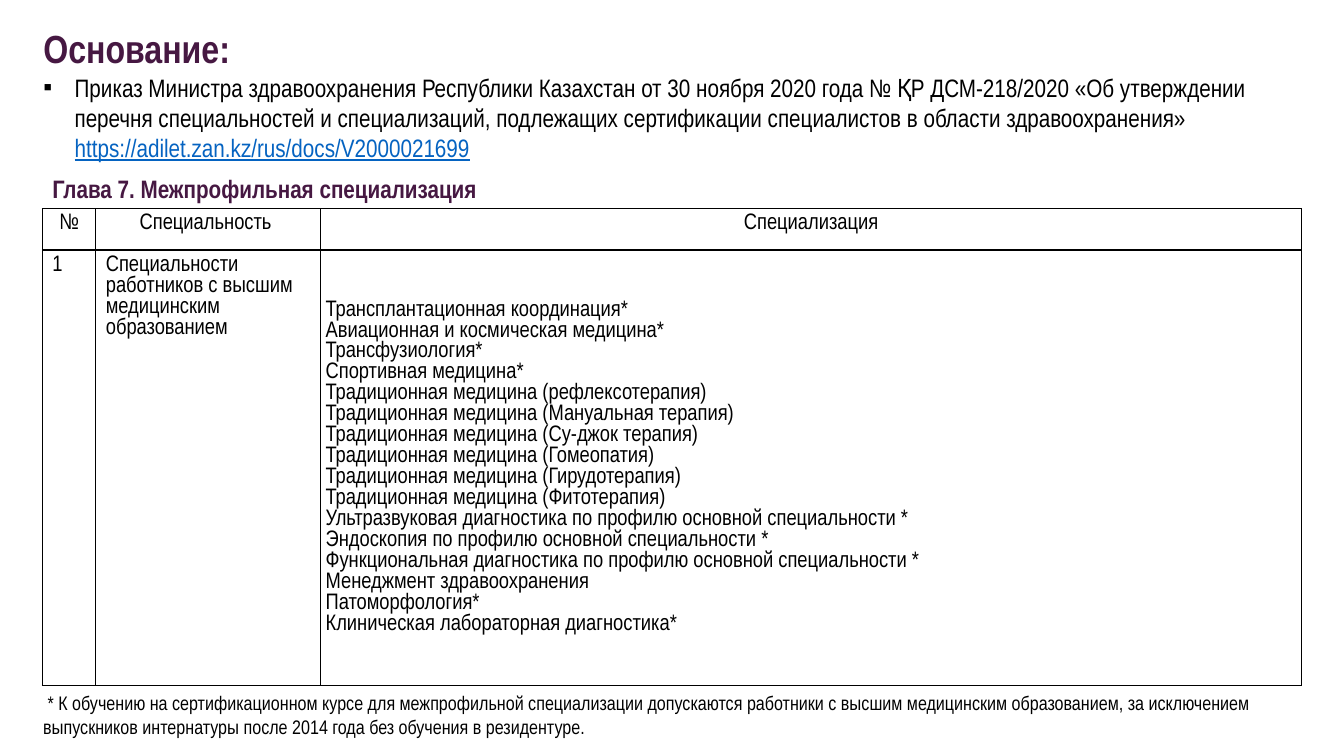
from lxml import etree
from pptx import Presentation
from pptx import util as u
from pptx.dml.color import RGBColor
from pptx.enum import text
from pptx.oxml import ns

FONT = "Arial Narrow"
PLUM = RGBColor(0x46, 0x18, 0x42)
BLACK = RGBColor(0, 0, 0)
LINK_BLUE = RGBColor(0x05, 0x63, 0xC1)

HEADINGS = ["№", "Специальность ", "Специализация"]
SPECIALTY = "Специальности работников с высшим медицинским образованием"
TRADITIONAL = ["рефлексотерапия", "Мануальная терапия", "Су-джок терапия",
               "Гомеопатия", "Гирудотерапия", "Фитотерапия"]
SPECIALIZATIONS = [
    "Трансплантационная координация*",
    "Авиационная и космическая медицина*",
    "Трансфузиология*",
    "Спортивная медицина*",
    *[f"Традиционная медицина ({kind})" for kind in TRADITIONAL],
    "Ультразвуковая диагностика по профилю основной специальности *",
    "Эндоскопия по профилю основной специальности *",
    "Функциональная диагностика по профилю основной специальности *",
    "Менеджмент здравоохранения",
    "Патоморфология*",
    "Клиническая лабораторная диагностика*",
]
ORDER = ("Приказ Министра здравоохранения Республики Казахстан от 30 ноября 2020 года "
         "№ ҚР ДСМ-218/2020 «Об утверждении перечня специальностей и специализаций, "
         "подлежащих сертификации специалистов в области здравоохранения» ")
ORDER_ADDRESS = "https://adilet.zan.kz/rus/docs/V2000021699"
FOOTNOTE = (" * К обучению на сертификационном курсе для межпрофильной специализации "
            "допускаются работники с высшим медицинским образованием, за исключением "
            "выпускников интернатуры после 2014 года без обучения в резидентуре.")


def style_span(span, size, color=BLACK, bold=False):
    span.font.name = FONT
    span.font.size = u.Pt(size)
    span.font.bold = bold
    span.font.color.rgb = color


def style_para(para, size, color=BLACK, bold=False, align=text.PP_ALIGN.LEFT, spacing=1.0):
    para.alignment = align
    para.line_spacing = spacing
    para.space_before = para.space_after = u.Pt(0)
    for span in para.runs:
        style_span(span, size, color, bold)


def place(shape, box):
    """Move a placeholder into the box and fix its text frame to the top."""
    shape.left, shape.top, shape.width, shape.height = map(u.Inches, box)
    frame = shape.text_frame
    frame.word_wrap = True
    frame.auto_size = text.MSO_AUTO_SIZE.NONE
    frame.vertical_anchor = text.MSO_ANCHOR.TOP
    return frame


def add_bullet(para, indent):
    props = para._p.get_or_add_pPr()
    props.set("marL", str(u.Inches(indent)))
    props.set("indent", str(-u.Inches(indent)))
    etree.SubElement(props, ns.qn("a:buFont"), typeface="Arial")
    etree.SubElement(props, ns.qn("a:buChar"), char="▪")


def add_basis(page, box):
    """Heading with the bulleted order below it."""
    left, top, width, height = box
    heading_height = 0.475
    frame = place(page.shapes.title, (left, top, width, heading_height + 0.05))
    frame.text = "Основание:"
    style_para(frame.paragraphs[0], 28, PLUM, True)

    frame = place(page.placeholders[1],
                  (left, top + heading_height, width, height - heading_height))
    para = frame.paragraphs[0]
    para.text = ORDER
    link = para.add_run()
    link.text = ORDER_ADDRESS
    style_para(para, 18)
    style_span(link, 18, LINK_BLUE)
    link.font.underline = True
    add_bullet(para, 0.31)


def add_text(page, box, words, size, color=BLACK, bold=False):
    frame = page.shapes.add_textbox(*map(u.Inches, box)).text_frame
    frame.word_wrap = True
    frame.text = words
    style_para(frame.paragraphs[0], size, color, bold)


def add_borders(cell):
    props = cell._tc.get_or_add_tcPr()
    for side in ("lnL", "lnR", "lnT", "lnB"):
        line = etree.SubElement(props, ns.qn(f"a:{side}"), w=str(u.Pt(1)))
        fill = etree.SubElement(line, ns.qn("a:solidFill"))
        etree.SubElement(fill, ns.qn("a:srgbClr"), val=str(BLACK))


def add_specializations(page, box):
    left, top, width, height = box
    rows = [HEADINGS, ["1", SPECIALTY, "\n".join(SPECIALIZATIONS)]]
    table = page.shapes.add_table(len(rows), len(HEADINGS), *map(u.Inches, box)).table
    table.first_row = table.horz_banding = False
    number, specialty, heading_height = 0.53, 2.23, 0.41
    for column, size in zip(table.columns, (number, specialty, width - number - specialty)):
        column.width = u.Inches(size)
    for row, size in zip(table.rows, (heading_height, height - heading_height)):
        row.height = u.Inches(size)

    for r, row in enumerate(rows):
        align = text.PP_ALIGN.LEFT if r else text.PP_ALIGN.CENTER
        for c, words in enumerate(row):
            cell = table.cell(r, c)
            cell.text = words
            add_borders(cell)
            cell.fill.background()
            for para in cell.text_frame.paragraphs:
                style_para(para, 16, align=align, spacing=u.Pt(15))
    listing = table.cell(1, 2)
    listing.vertical_anchor = text.MSO_ANCHOR.MIDDLE
    listing.margin_left = listing.margin_right = u.Inches(0.05)
    listing.margin_top = listing.margin_bottom = u.Inches(0.03)


def main():
    deck = Presentation()
    deck.slide_width, deck.slide_height = u.Inches(13.33), u.Inches(7.5)
    page = deck.slides.add_slide(deck.slide_layouts[1])
    add_basis(page, (0.33, 0.19, 12.58, 1.48))
    add_specializations(page, (0.42, 2.07, 12.49, 4.73))
    add_text(page, (0.42, 1.67, 12.49, 0.4), "Глава 7. Межпрофильная специализация",
             18, PLUM, True)
    add_text(page, (0.33, 6.81, 12.58, 0.57), FOOTNOTE, 14)
    deck.save("out.pptx")


if __name__ == "__main__":
    main()
